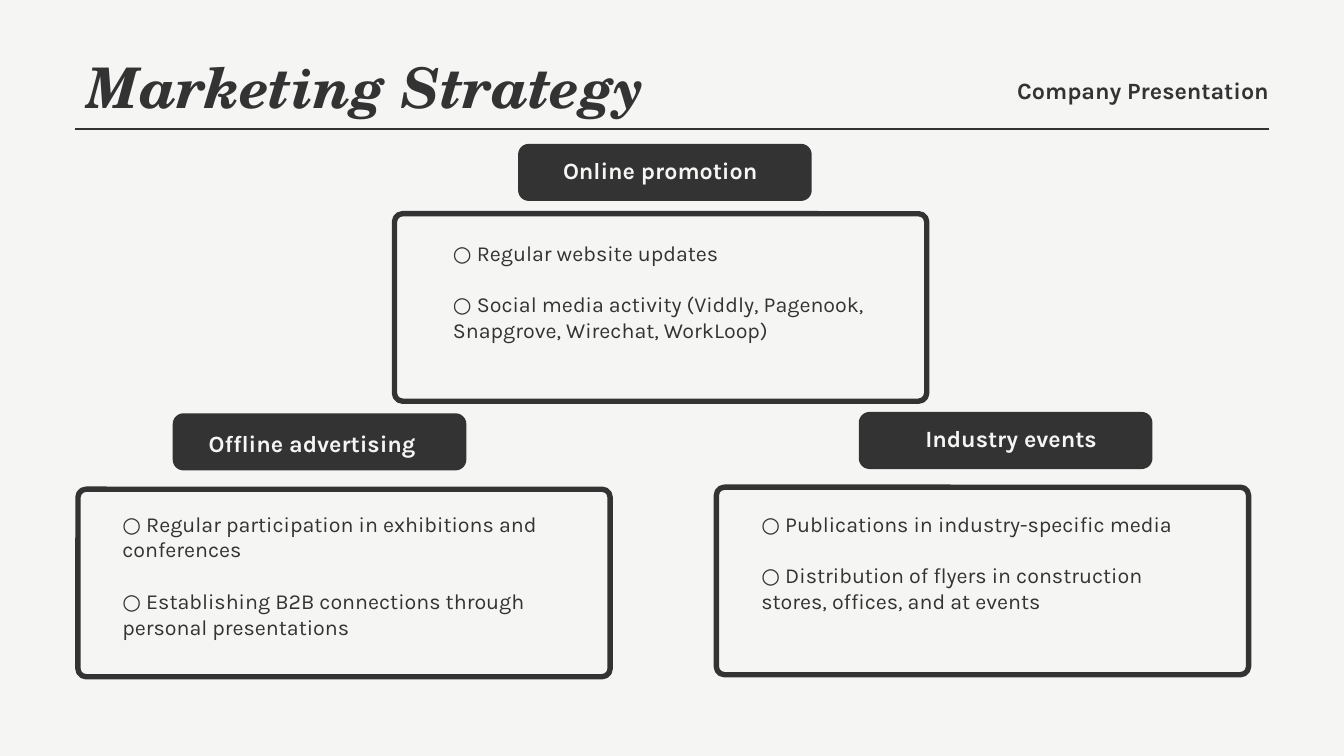
from dataclasses import dataclass

from lxml import etree
from pptx import Presentation
from pptx.dml.color import RGBColor
from pptx.enum import shapes, text
from pptx.oxml import ns
from pptx.util import Inches, Pt


@dataclass(frozen=True)
class Theme:
    ink: RGBColor = RGBColor(0x33, 0x33, 0x33)
    paper: RGBColor = RGBColor(0xF5, 0xF5, 0xF4)
    title_font: str = "TeX Gyre Schola"
    body_font: str = "Karla"
    title_size: int = 60
    label_size: int = 25
    body_size: float = 23


theme = Theme()
LEFT, CENTER, RIGHT = text.PP_ALIGN.LEFT, text.PP_ALIGN.CENTER, text.PP_ALIGN.RIGHT

deck = Presentation()
deck.slide_width, deck.slide_height = Inches(20), Inches(11.25)
page = deck.slides.add_slide(deck.slide_layouts[6])
page.background.fill.solid()
page.background.fill.fore_color.rgb = theme.paper


def add_text(place, lines, size, leading, color=theme.ink, align=LEFT,
             bold=True, italic=False, font=theme.body_font, gap=0):
    """Add a text box without margins, one paragraph per line of text."""
    box = page.shapes.add_textbox(*map(Inches, place))
    frame = box.text_frame
    frame.word_wrap = True
    frame.margin_left = frame.margin_right = frame.margin_top = frame.margin_bottom = 0
    frame.text = "\n".join(lines)
    for index, para in enumerate(frame.paragraphs):
        para.alignment = align
        para.line_spacing = Pt(leading)
        para.space_before = Pt(gap if index else 0)
        for span in para.runs:
            span.font.name, span.font.size = font, Pt(size)
            span.font.bold, span.font.italic = bold, italic
            span.font.color.rgb = color


def add_rounded(place, radius):
    """Add a rounded rectangle with a corner radius in inches."""
    box = page.shapes.add_shape(shapes.MSO_SHAPE.ROUNDED_RECTANGLE, *map(Inches, place))
    box.adjustments[0] = radius / min(place[2:])
    box.shadow.inherit = False
    return box


# Header
rule = page.shapes.add_connector(shapes.MSO_CONNECTOR.STRAIGHT,
                                 Inches(1.12), Inches(1.92), Inches(18.88), Inches(1.92))
rule.line.color.rgb = theme.ink
rule.line.width = Pt(2.25)
etree.SubElement(rule.element.spPr, ns.qn("a:effectLst"))
add_text((13.37, 1.06, 5.51, 0.47), ["Company Presentation"], theme.label_size, 35, align=RIGHT)
add_text((-0.24, 0.36, 11.58, 1.29), ["Marketing Strategy "], theme.title_size, 102,
         align=CENTER, italic=True, font=theme.title_font)

# Channels: pill corner, label place, frame corner, body place, label, points
channels = [
    ((2.57, 6.15), (2.54, 6.39), (1.12, 7.24), (1.82, 7.6, 6.2, 1.94), "Offline advertising",
     ["○ Regular participation in exhibitions and conferences",
      "○ Establishing B2B connections through personal presentations"]),
    ((12.78, 6.13), (12.94, 6.31), (10.62, 7.21), (11.33, 7.6, 6.2, 1.55), "Industry events",
     ["○ Publications in industry-specific media",
      "○ Distribution of flyers in construction stores, offices, and at events"]),
    ((7.71, 2.14), (7.72, 2.33), (5.83, 3.14), (6.74, 3.57, 6.95, 1.55), "Online promotion",
     ["○ Regular website updates",
      "○ Social media activity (Viddly, Pagenook, Snapgrove, Wirechat, WorkLoop)"]),
]
border = 0.08  # the frame line lies inside its outer edge

for pill_at, label_at, frame_at, body_at, label, points in channels:
    # Heading pill
    pill = add_rounded((*pill_at, 4.37, 0.85), 0.16)
    pill.fill.solid()
    pill.fill.fore_color.rgb = theme.ink
    pill.line.fill.background()
    add_text((*label_at, 4.21, 0.4), [label], theme.label_size, 30, theme.paper, CENTER)

    # Outlined panel with its points
    panel = add_rounded((frame_at[0] + border / 2, frame_at[1] + border / 2,
                         8 - border, 2.87 - border), 0.12)
    panel.fill.background()
    panel.line.color.rgb = theme.ink
    panel.line.width = Inches(border)
    add_text(body_at, points, theme.body_size, 27.6, bold=False, gap=27.6)

deck.save("out.pptx")
